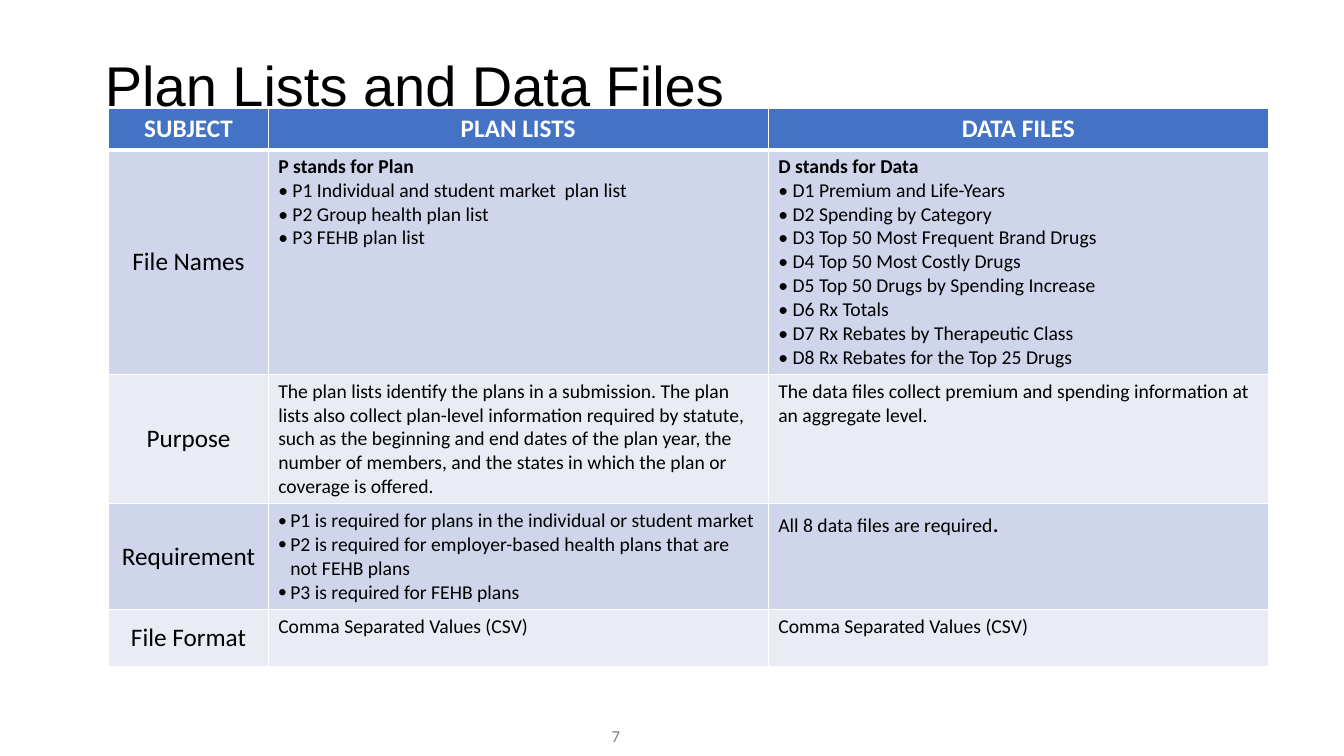
import pptx
import pptx.dml.color
import pptx.enum.text
import pptx.oxml
import pptx.oxml.ns
import pptx.util
from pptx.util import Inches

ALIGN = pptx.enum.text.PP_ALIGN
ANCHOR = pptx.enum.text.MSO_ANCHOR
NAMESPACE = pptx.oxml.ns.nsdecls("a")


def style(font, size, color, name="Calibri", bold=False):
    font.size = pptx.util.Pt(size)
    font.name = name
    font.bold = bold
    font.color.rgb = pptx.dml.color.RGBColor.from_string(color)


def add_borders(cell, widths):
    """Draw white borders; widths maps the sides L, R, T, B to points."""
    properties = cell._tc.get_or_add_tcPr()
    for position, (side, width) in enumerate(widths.items()):
        properties.insert(position, pptx.oxml.parse_xml(
            f'<a:ln{side} {NAMESPACE} w="{pptx.util.Pt(width)}"><a:solidFill>'
            f'<a:srgbClr val="FFFFFF"/></a:solidFill></a:ln{side}>'))


presentation = pptx.Presentation()
presentation.slide_width = Inches(13.33)
presentation.slide_height = Inches(7.5)
slide = presentation.slides.add_slide(presentation.slide_layouts[5])

title = slide.shapes.title
title.left, title.top = Inches(0.94), Inches(0.15)
title.width, title.height = Inches(11.5), Inches(1.45)
title.text_frame.text = "Plan Lists and Data Files"
title.text_frame.auto_size = pptx.enum.text.MSO_AUTO_SIZE.NONE
title.text_frame.vertical_anchor = ANCHOR.MIDDLE
heading = title.text_frame.paragraphs[0]
heading.alignment = ALIGN.LEFT
heading.line_spacing = 0.9
style(heading.runs[0].font, 40, "000000", "Arial")

# Each row: height, fill, then the lines of its three cells
rows = [
    (0.38, "4472C4", ["SUBJECT"], ["PLAN LISTS"], ["DATA FILES"]),
    (2.09, "CFD5EA", ["File Names"],
     ["P stands for Plan",
      "• P1 Individual and student market  plan list",
      "• P2 Group health plan list",
      "• P3 FEHB plan list"],
     ["D stands for Data",
      "• D1 Premium and Life-Years",
      "• D2 Spending by Category",
      "• D3 Top 50 Most Frequent Brand Drugs",
      "• D4 Top 50 Most Costly Drugs",
      "• D5 Top 50 Drugs by Spending Increase",
      "• D6 Rx Totals",
      "• D7 Rx Rebates by Therapeutic Class",
      "• D8 Rx Rebates for the Top 25 Drugs"]),
    (1.2, "E9EBF5", ["Purpose"],
     ["The plan lists identify the plans in a submission. The plan lists also "
      "collect plan-level information required by statute, such as the beginning "
      "and end dates of the plan year, the number of members, and the states in "
      "which the plan or coverage is offered."],
     ["The data files collect premium and spending information at an aggregate level."]),
    (0.76, "CFD5EA", ["Requirement"],
     ["P1 is required for plans in the individual or student market",
      "P2 is required for employer-based health plans that are not FEHB plans",
      "P3 is required for FEHB plans"],
     ["All 8 data files are required"]),
    (0.57, "E9EBF5", ["File Format"],
     ["Comma Separated Values (CSV)"],
     ["Comma Separated Values (CSV)"]),
]
column_widths = [1.58, 4.96, 4.96]
HEADER, FILE_NAMES, REQUIREMENT = 0, 1, 3

table = slide.shapes.add_table(
    len(rows), len(column_widths), Inches(1.08), Inches(1.08),
    Inches(11.5), Inches(sum(row[0] for row in rows))).table
for column, width in zip(table.columns, column_widths):
    column.width = Inches(width)

for row_index, (height, fill, *contents) in enumerate(rows):
    table.rows[row_index].height = Inches(height)
    is_header = row_index == HEADER
    for column_index, lines in enumerate(contents):
        cell = table.cell(row_index, column_index)
        is_subject = column_index == 0
        cell.fill.solid()
        cell.fill.fore_color.rgb = pptx.dml.color.RGBColor.from_string(fill)
        add_borders(cell, {"L": 1, "R": 1,
                           "T": 3 if row_index == FILE_NAMES else 1,
                           "B": 3 if is_header else 1})
        if is_subject and not is_header:
            cell.vertical_anchor = ANCHOR.MIDDLE
        cell.text_frame.text = "\n".join(lines)
        for line_index, paragraph in enumerate(cell.text_frame.paragraphs):
            is_large = is_header or is_subject
            paragraph.alignment = ALIGN.CENTER if is_large else ALIGN.LEFT
            is_lead = row_index == FILE_NAMES and not is_subject and line_index == 0
            style(paragraph.runs[0].font, 18 if is_large else 14,
                  "FFFFFF" if is_header else "000000", bold=is_header or is_lead)

for paragraph in table.cell(REQUIREMENT, 1).text_frame.paragraphs:
    properties = paragraph._p.get_or_add_pPr()
    properties.set("marL", str(Inches(0.12)))
    properties.set("indent", str(-Inches(0.12)))
    for bullet in ('buSzPct {} val="120000"', 'buFont {} typeface="Arial"',
                   'buChar {} char="•"'):
        properties.append(pptx.oxml.parse_xml(f"<a:{bullet.format(NAMESPACE)}/>"))

full_stop = table.cell(REQUIREMENT, 2).text_frame.paragraphs[0].add_run()
full_stop.text = "."
style(full_stop.font, 18, "000000")

page_number = slide.shapes.add_textbox(
    Inches(3.25), Inches(7.1), Inches(3), Inches(0.4)).text_frame
page_number.word_wrap = True
page_number.vertical_anchor = ANCHOR.MIDDLE
page_number.text = "7"
page_number.paragraphs[0].alignment = ALIGN.RIGHT
style(page_number.paragraphs[0].runs[0].font, 12, "808080")

presentation.save("out.pptx")
